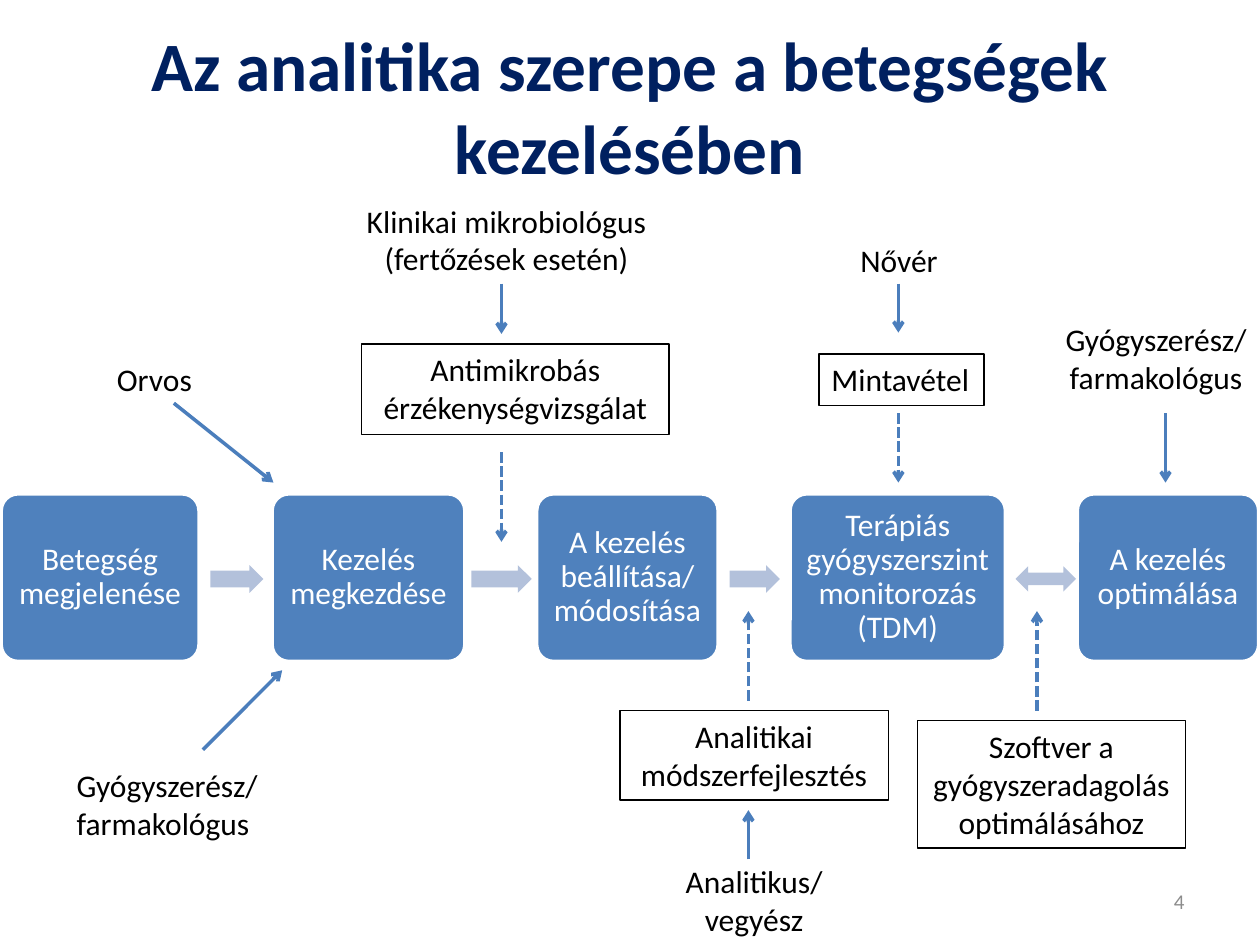
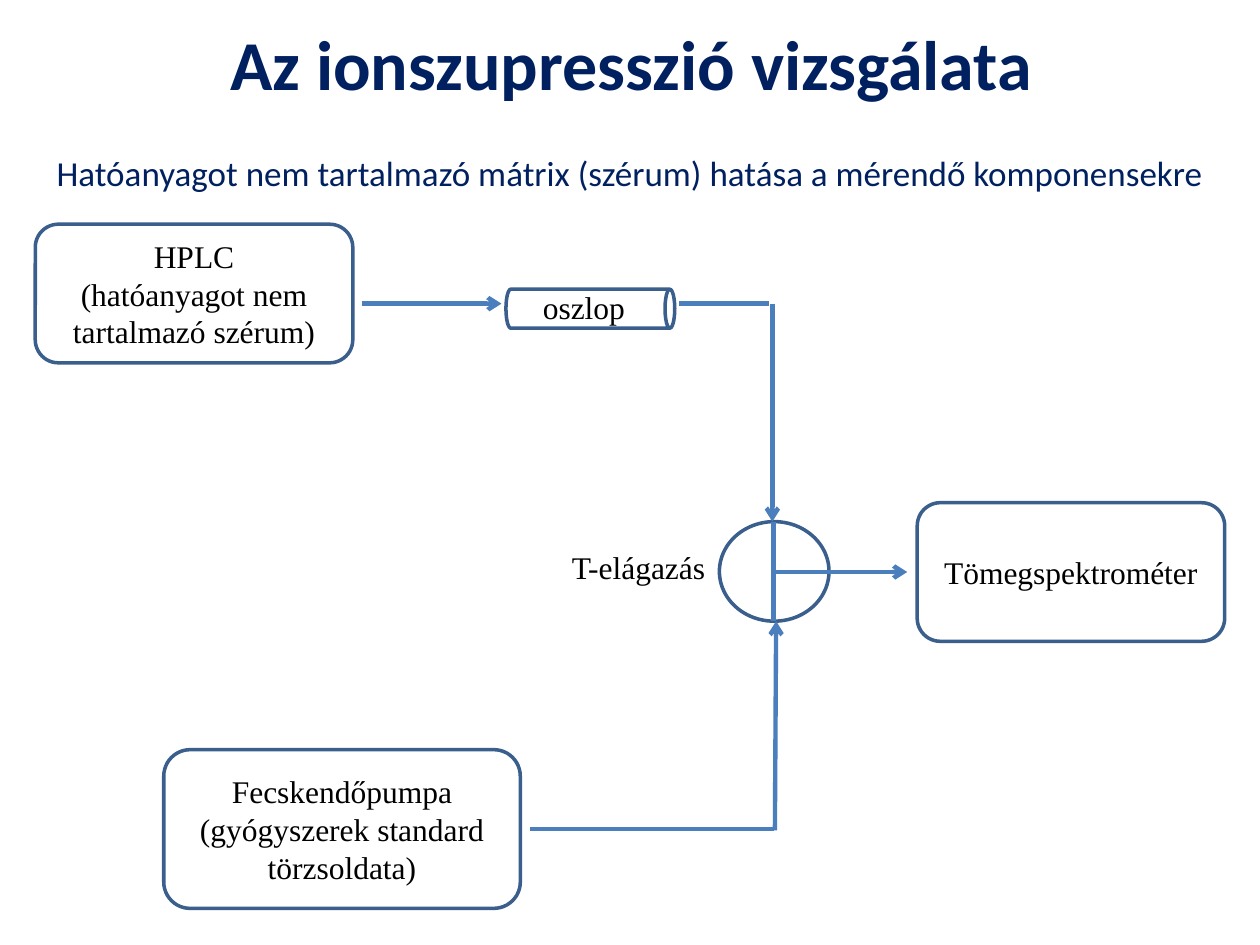
from dataclasses import dataclass
from typing import Optional

from lxml.etree import SubElement
from pptx import Presentation
from pptx.dml.color import RGBColor
from pptx.enum.dml import MSO_LINE
from pptx.enum.shapes import MSO_CONNECTOR, MSO_SHAPE as Shape
from pptx.enum.text import MSO_ANCHOR as Anchor, MSO_AUTO_SIZE, PP_ALIGN as Align
from pptx.oxml.ns import qn
from pptx.util import Inches, Pt

WIDTH, HEIGHT = Inches(10), Inches(7.5)
COLUMN, ROW = WIDTH / 100, HEIGHT / 75

NAVY, BLACK, WHITE, GREY = "002060", "000000", "FFFFFF", "8C8C8C"
STEP_BLUE, FLOW_BLUE = "4F81BD", "B3C1DB"
LINE_BLUE, OUTLINE_BLUE = "4B7EBC", "3A5F8C"
SANS, SERIF = "Calibri", "Times New Roman"


@dataclass(frozen=True)
class Area:
    left: float
    top: float
    width: float
    height: float

    def lengths(self) -> tuple[int, int, int, int]:
        return (round(self.left * COLUMN), round(self.top * ROW),
                round(self.width * COLUMN), round(self.height * ROW))


@dataclass(frozen=True)
class TextStyle:
    size: float = 18
    font: str = SANS
    color: str = BLACK
    bold: bool = False
    align: Align = Align.CENTER
    anchor: Anchor = Anchor.TOP
    spacing: float = 1.0
    inset: Optional[float] = None
    wrap: bool = True


@dataclass(frozen=True)
class Label:
    area: Area
    lines: tuple[str, ...]
    style: TextStyle = TextStyle()
    framed: bool = False


@dataclass(frozen=True)
class Step:
    text: str
    left: float
    width: float


@dataclass(frozen=True)
class Flow:
    left: float
    width: float
    both_ways: bool = False


@dataclass(frozen=True)
class Link:
    start: tuple[float, float]
    end: tuple[float, float]
    dashed: bool = False
    arrow: bool = True


LEFT_TEXT = TextStyle(align=Align.LEFT)
STEP_TEXT = TextStyle(color=WHITE, anchor=Anchor.MIDDLE, spacing=0.9, inset=0.07)
DEVICE_TEXT = TextStyle(font=SERIF, anchor=Anchor.MIDDLE)
PART_TEXT = TextStyle(font=SERIF, align=Align.LEFT, wrap=False)
SUBTITLE_TEXT = TextStyle(size=20, color=NAVY, align=Align.LEFT, wrap=False)
NUMBER_TEXT = TextStyle(size=12, color=GREY, align=Align.RIGHT, anchor=Anchor.MIDDLE)

STEP_TOP, STEP_HEIGHT = 39.2, 13.3
STEP_MIDDLE = STEP_TOP + STEP_HEIGHT / 2
STEPS = (
    Step("Betegség megjelenése", 0.1, 15.7),
    Step("Kezelés megkezdése", 21.6, 15.3),
    Step("A kezelés beállítása/módosítása", 42.6, 14.4),
    Step("Terápiás gyógyszerszint monitorozás (TDM)", 62.7, 17.1),
    Step("A kezelés optimálása", 85.5, 14.4),
)
FLOWS = (
    Flow(16.7, 4.2),
    Flow(37.4, 4.8),
    Flow(57.9, 4),
    Flow(80.6, 4.8, both_ways=True),
)
PHARMACIST = ("Gyógyszerész/farmakológus",)
ROLES = (
    Label(Area(8.3, 28.1, 8, 4.1), ("Orvos",), LEFT_TEXT),
    Label(Area(5.1, 60.3, 16.5, 7.1), PHARMACIST, LEFT_TEXT),
    Label(Area(83.5, 24.9, 16.5, 7.1), PHARMACIST),
    Label(Area(67.3, 18.6, 8.2, 4.1), ("Nővér",), LEFT_TEXT),
    Label(Area(28, 15.5, 24.4, 7.1), ("Klinikai mikrobiológus (fertőzések esetén)",)),
    Label(Area(51.6, 67.9, 16.5, 7.1), ("Analitikus/", "vegyész")),
)
TASKS = (
    Label(Area(65, 28.1, 13.1, 4.1), ("Mintavétel",), LEFT_TEXT, True),
    Label(Area(28.7, 27.3, 24.4, 7.2), ("Antimikrobás érzékenységvizsgálat",), framed=True),
    Label(Area(49.2, 56.4, 21.3, 7.1), ("Analitikai módszerfejlesztés",), framed=True),
    Label(Area(72.8, 57.2, 21.3, 10.1), ("Szoftver a gyógyszeradagolás optimálásához",), framed=True),
)
TREATMENT_LINKS = (
    Link((13.8, 32), (21.7, 38.3)),
    Link((16.1, 59.5), (22.4, 53.2)),
    Link((71.3, 22.5), (71.3, 26.4)),
    Link((71.3, 32.8), (71.3, 38.3), dashed=True),
    Link((39.8, 22.5), (39.8, 26.5)),
    Link((39.8, 35.9), (39.8, 43), dashed=True),
    Link((59.4, 68.2), (59.4, 64.3)),
    Link((59.4, 55.6), (59.4, 48.5), dashed=True),
    Link((82.3, 56.4), (82.3, 48.5), dashed=True),
    Link((92.5, 32.8), (92.5, 38.3)),
)

DEVICES = (
    Label(Area(72.8, 39.9, 24.4, 11), ("Tömegspektrométer",), DEVICE_TEXT),
    Label(Area(2.8, 17.8, 25.2, 11), ("HPLC", "(hatóanyagot nem tartalmazó szérum)"), DEVICE_TEXT),
    Label(Area(13, 59.5, 28.3, 12.6), ("Fecskendőpumpa", "(gyógyszerek standard törzsoldata)"), DEVICE_TEXT),
)
PARTS = (
    Label(Area(42.1, 22.4, 8.6, 4), ("oszlop",), PART_TEXT),
    Label(Area(44.4, 43, 12.7, 4), ("T-elágazás",), PART_TEXT),
)
COLUMN_TUBE = Area(45.3, 17.8, 3.1, 13.4)
TEE = Area(57.1, 41.4, 8.7, 7.9)
TEE_X = 61.4
TEE_BOTTOM = TEE.top + TEE.height
TUBES = (
    Link((28.7, 24.1), (39.8, 24.1)),
    Link((53.9, 24.1), (61, 24.1), arrow=False),
    Link((61.3, 24.1), (61.3, TEE.top)),
    Link((42.1, 65.8), (TEE_X, 65.8), arrow=False),
    Link((61.5, 65.9), (61.6, TEE_BOTTOM)),
    Link((TEE_X, TEE.top), (TEE_X, TEE_BOTTOM), arrow=False),
    Link((65.7, 45.4), (TEE_X, 45.4), arrow=False),
    Link((65.7, 45.4), (72, 45.4)),
)


def color(value: str) -> RGBColor:
    return RGBColor.from_string(value)


def write(frame, lines: tuple[str, ...], style: TextStyle) -> None:
    frame.word_wrap = style.wrap
    frame.auto_size = MSO_AUTO_SIZE.NONE
    frame.vertical_anchor = style.anchor
    if style.inset is not None:
        frame.margin_left = frame.margin_right = Inches(style.inset)
        frame.margin_top = frame.margin_bottom = Inches(style.inset)
    for index, line in enumerate(lines):
        para = frame.add_paragraph() if index else frame.paragraphs[0]
        para.alignment = style.align
        para.line_spacing = style.spacing
        span = para.add_run()
        span.text = line
        span.font.name = style.font
        span.font.size = Pt(style.size)
        span.font.bold = style.bold
        span.font.color.rgb = color(style.color)


def add_titled_page(deck, title: str, area: Area, size: float):
    page = deck.slides.add_slide(deck.slide_layouts[5])
    heading = page.shapes.title
    heading.left, heading.top, heading.width, heading.height = area.lengths()
    style = TextStyle(size=size, color=NAVY, bold=True, anchor=Anchor.MIDDLE)
    write(heading.text_frame, (title,), style)
    return page


def add_shape(page, kind: Shape, area: Area, fill: Optional[str] = None,
              line: Optional[str] = None, weight: float = 2):
    shape = page.shapes.add_shape(kind, *area.lengths())
    shape.shadow.inherit = False
    if fill:
        shape.fill.solid()
        shape.fill.fore_color.rgb = color(fill)
    else:
        shape.fill.background()
    if line:
        shape.line.color.rgb = color(line)
        shape.line.width = Pt(weight)
    else:
        shape.line.fill.background()
    return shape


def add_label(page, label: Label) -> None:
    if label.framed:
        box = add_shape(page, Shape.RECTANGLE, label.area, line=BLACK, weight=0.75)
    else:
        box = page.shapes.add_textbox(*label.area.lengths())
    write(box.text_frame, label.lines, label.style)


def add_link(page, link: Link, weight: float) -> None:
    points = [round(value * unit) for point in (link.start, link.end)
              for value, unit in zip(point, (COLUMN, ROW))]
    connector = page.shapes.add_connector(MSO_CONNECTOR.STRAIGHT, *points)
    connector.line.color.rgb = color(LINE_BLUE)
    connector.line.width = Pt(weight)
    if link.dashed:
        connector.line.dash_style = MSO_LINE.SQUARE_DOT
    properties = connector._element.spPr
    if link.arrow:
        SubElement(properties.find(qn("a:ln")), qn("a:tailEnd"), type="arrow")
    SubElement(properties, qn("a:effectLst"))


def add_step(page, step: Step) -> None:
    area = Area(step.left, STEP_TOP, step.width, STEP_HEIGHT)
    box = add_shape(page, Shape.ROUNDED_RECTANGLE, area, STEP_BLUE, WHITE)
    box.adjustments[0] = 0.1
    write(box.text_frame, (step.text,), STEP_TEXT)


def add_flow(page, flow: Flow) -> None:
    kind = Shape.LEFT_RIGHT_ARROW if flow.both_ways else Shape.RIGHT_ARROW
    height = 2 if flow.both_ways else 2.2
    area = Area(flow.left, STEP_MIDDLE + 0.1 - height / 2, flow.width, height)
    arrow = add_shape(page, kind, area, FLOW_BLUE)
    if not flow.both_ways:
        arrow.adjustments[0] = 0.6


def build_treatment_page(deck) -> None:
    page = add_titled_page(deck, "Az analitika szerepe a betegségek kezelésében",
                           Area(0, 2.1, 100, 12.5), 39.6)
    for step in STEPS:
        add_step(page, step)
    for flow in FLOWS:
        add_flow(page, flow)
    for label in ROLES + TASKS:
        add_label(page, label)
    for link in TREATMENT_LINKS:
        add_link(page, link, 2)
    add_label(page, Label(Area(71.7, 69.5, 23.3, 4), ("4",), NUMBER_TEXT))


def build_suppression_page(deck) -> None:
    page = add_titled_page(deck, "Az ionszupresszió vizsgálata", Area(5.1, 0, 90, 9.9), 40)
    subtitle = "Hatóanyagot nem tartalmazó mátrix (szérum) hatása a mérendő komponensekre"
    add_label(page, Label(Area(3.5, 11.5, 93.9, 4.4), (subtitle,), SUBTITLE_TEXT))
    for device in DEVICES:
        box = add_shape(page, Shape.ROUNDED_RECTANGLE, device.area, line=OUTLINE_BLUE)
        write(box.text_frame, device.lines, device.style)
    add_shape(page, Shape.CAN, COLUMN_TUBE, line=OUTLINE_BLUE).rotation = 90
    add_shape(page, Shape.OVAL, TEE, line=OUTLINE_BLUE)
    for tube in TUBES:
        add_link(page, tube, 2.5)
    for part in PARTS:
        add_label(page, part)


def main() -> None:
    deck = Presentation()
    deck.slide_width, deck.slide_height = WIDTH, HEIGHT
    build_treatment_page(deck)
    build_suppression_page(deck)
    deck.save("out.pptx")


if __name__ == "__main__":
    main()
